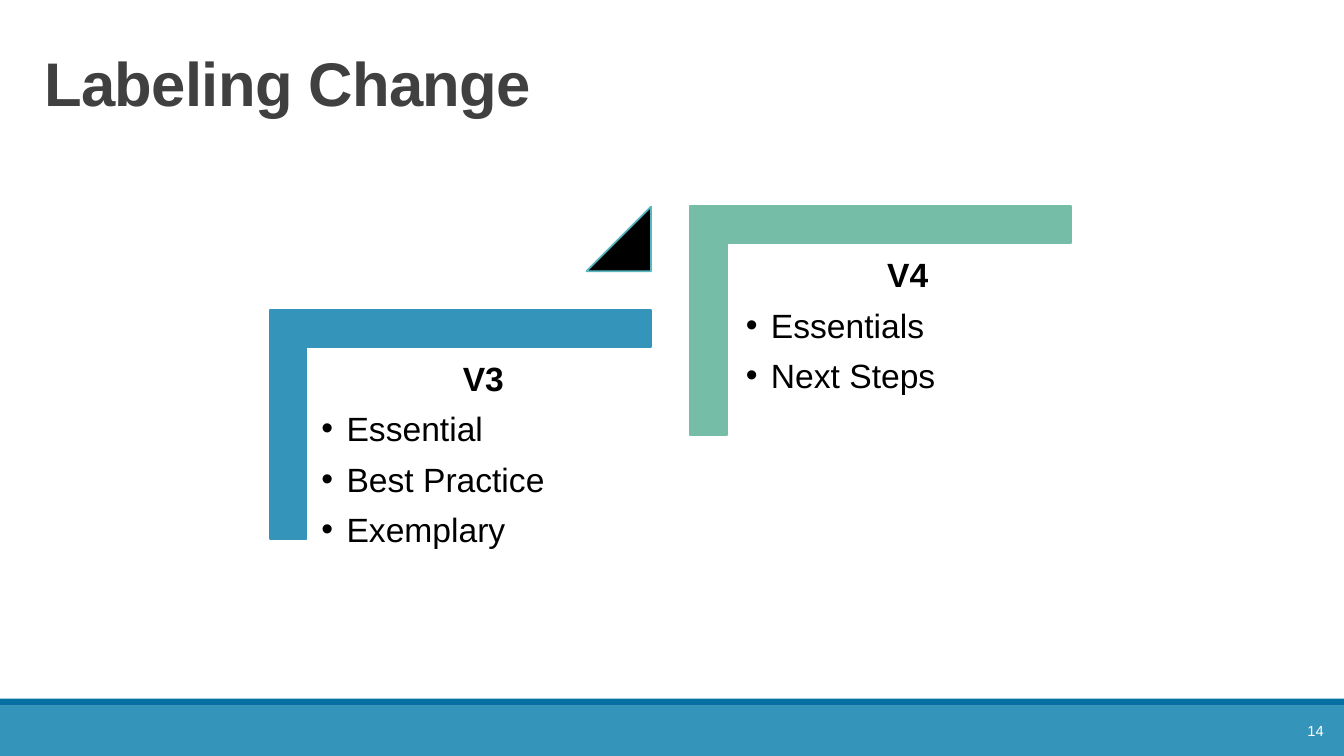
from lxml.etree import SubElement
from pptx import Presentation
from pptx.dml.color import RGBColor
from pptx.enum.shapes import MSO_SHAPE as Preset
from pptx.enum.text import MSO_ANCHOR as Anchor, PP_ALIGN as Align
from pptx.oxml.ns import qn
from pptx.util import Pt

FONT = "Arial"
BLUE, DARK_BLUE, GREEN, TEAL = "3494BA", "0770A3", "75BDA7", "58B6C0"
BLACK, GRAY, WHITE = "000000", "404040", "FFFFFF"


def color(hex_code):
    return RGBColor.from_string(hex_code)


def add_shape(page, preset, left, top, width, height, fill, line=None):
    shape = page.shapes.add_shape(preset, Pt(left), Pt(top), Pt(width), Pt(height))
    shape.shadow.inherit = False
    shape.fill.solid()
    shape.fill.fore_color.rgb = color(fill)
    if line:
        shape.line.color.rgb = color(line)
        shape.line.width = Pt(1.25)
    else:
        shape.line.fill.background()
    return shape


def add_box(page, left, top, width, height, anchor=Anchor.TOP):
    box = page.shapes.add_textbox(Pt(left), Pt(top), Pt(width), Pt(height))
    frame = box.text_frame
    frame.word_wrap = True
    frame.vertical_anchor = anchor
    return frame


def write(para, text, size=24, ink=BLACK, bold=False, align=Align.LEFT,
          after=0, line_spacing=None, tracking=None, bullet=False):
    """Fill a paragraph with one formatted run; tracking is in points."""
    if bullet:
        props = para._p.get_or_add_pPr()
        props.set("marL", str(Pt(18)))
        props.set("indent", str(-Pt(18)))
        SubElement(props, qn("a:buFont")).set("typeface", FONT)
        SubElement(props, qn("a:buChar")).set("char", "•")
    para.alignment = align
    para.space_after = Pt(after)
    if line_spacing:
        para.line_spacing = line_spacing
    span = para.add_run()
    span.text = text
    span.font.name = FONT
    span.font.size = Pt(size)
    span.font.bold = bold
    span.font.color.rgb = color(ink)
    if tracking:
        span.font._element.set("spc", str(round(tracking * 100)))


def add_step(page, left, top, text_left, fill, heading, items):
    """Draw a corner bracket with a heading and its bulleted labels."""
    corner = add_shape(page, Preset.CORNER, left, top, 163.5, 272.2, fill, fill)
    corner.rotation = 90
    corner.adjustments[0] = corner.adjustments[1] = 0.161
    frame = add_box(page, text_left, top + 81.4, 245.5, 215.3)
    frame.margin_left = frame.margin_right = Pt(7.2)
    frame.margin_top = frame.margin_bottom = Pt(7.2)
    write(frame.paragraphs[0], heading, bold=True, align=Align.CENTER, after=7.2)
    for item in items:
        write(frame.add_paragraph(), item, after=7.2, bullet=True)


def main():
    deck = Presentation()
    deck.slide_width, deck.slide_height = Pt(960), Pt(540)
    page = deck.slides.add_slide(deck.slide_layouts[6])

    add_shape(page, Preset.RECTANGLE, 0, 504, 960, 36, BLUE)
    add_shape(page, Preset.RECTANGLE, 0, 499, 960, 5, DARK_BLUE)

    title = add_box(page, 24.5, 22.3, 908.6, 80, Anchor.MIDDLE)
    write(title.paragraphs[0], "Labeling Change", size=44, ink=GRAY, bold=True,
          line_spacing=0.85, tracking=-0.5)

    add_step(page, 247, 167, 222.5, BLUE, "V3",
             ["Essential", "Best Practice", "Exemplary"])
    triangle = add_shape(page, Preset.ISOSCELES_TRIANGLE, 419, 147.6, 46.1, 46.1,
                         BLACK, TEAL)
    triangle.adjustments[0] = 1
    add_step(page, 547.2, 92.9, 525.6, GREEN, "V4", ["Essentials", "Next Steps"])

    number = add_box(page, 849.6, 507.6, 103, 28.8, Anchor.MIDDLE)
    write(number.paragraphs[0], "14", size=10.5, ink=WHITE, align=Align.RIGHT)

    deck.save("out.pptx")


if __name__ == "__main__":
    main()
